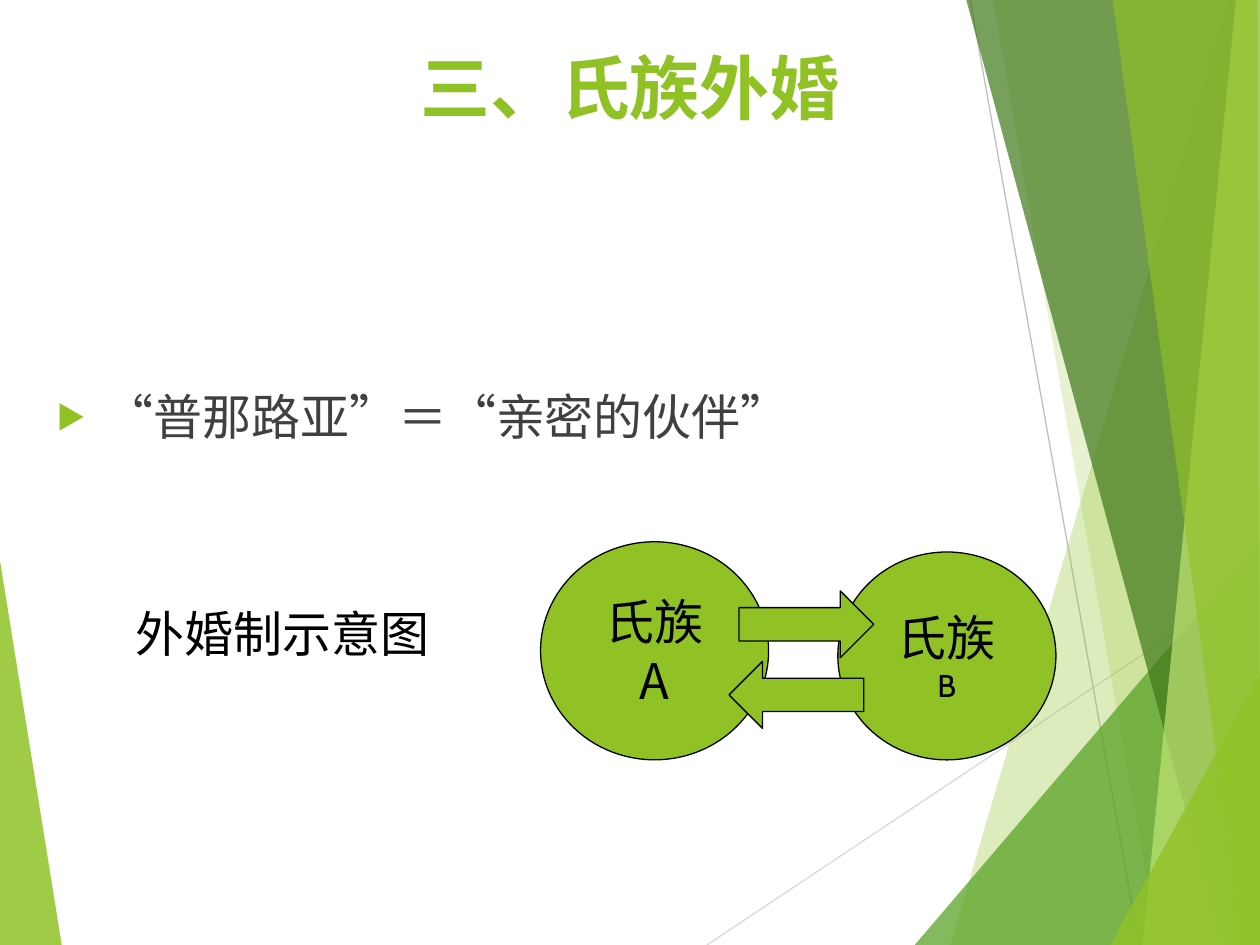
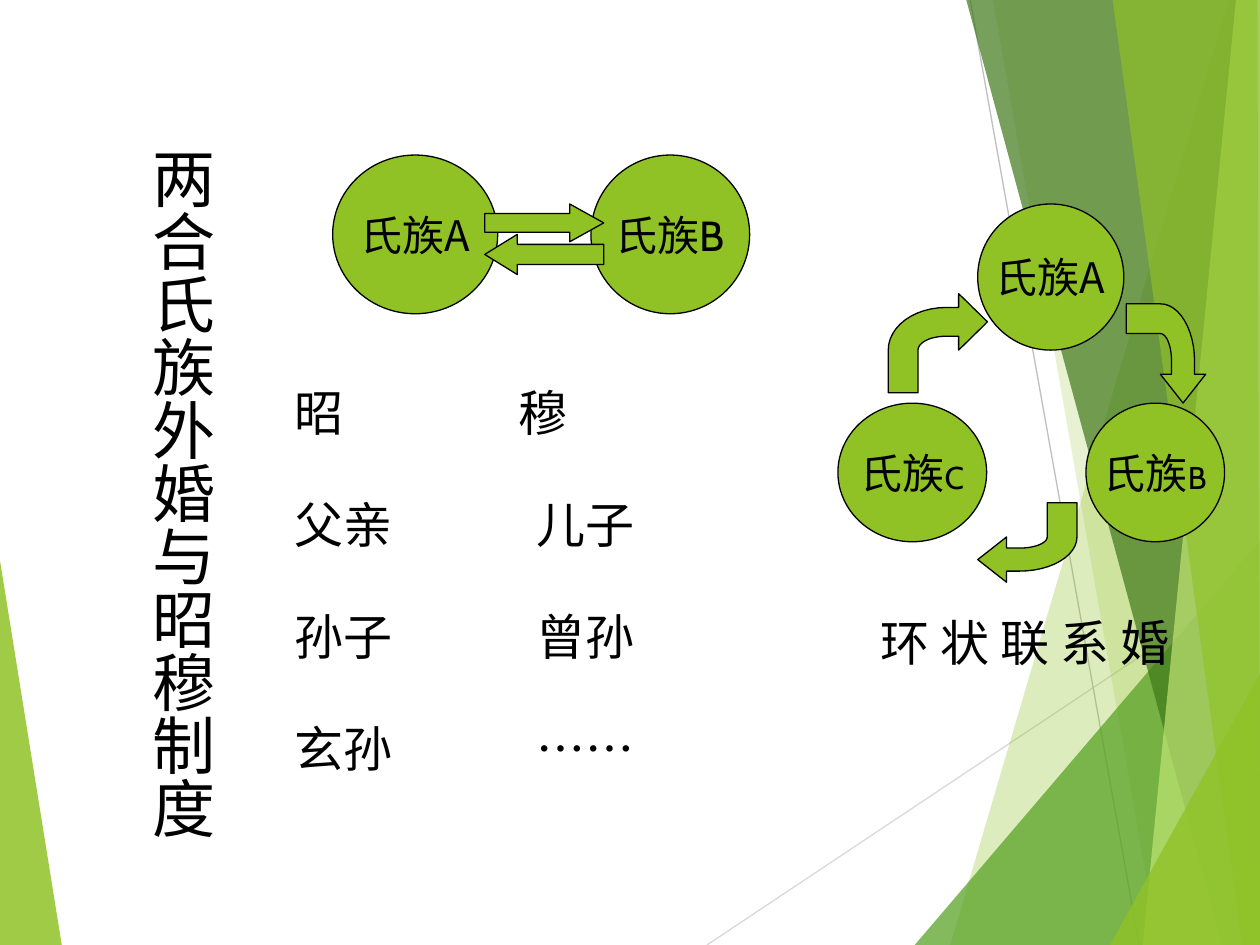
from itertools import cycle
from math import cos, pi, sin

from lxml.etree import SubElement
from pptx import Presentation
from pptx.dml.color import RGBColor
from pptx.enum.shapes import MSO_CONNECTOR as CONNECTOR, MSO_SHAPE as SHAPE
from pptx.enum.text import MSO_ANCHOR as ANCHOR, MSO_AUTO_SIZE as AUTO_SIZE, PP_ALIGN as ALIGN
from pptx.oxml.ns import qn
from pptx.util import Pt

COLORS = {
    "lime": "90C226",
    "green": "54A021",
    "forest": "3F7819",
    "pale": "C0E474",
    "text": "404040",
    "black": "000000",
    "light_line": "D9D9D9",
    "gray_line": "BFBFBF",
}
LATIN = "Cabin"
CJK = "Noto Sans CJK SC"
WIDTH, HEIGHT = 720, 540

RAYS = [((404, 540), (720.7, 329), "light_line"), ((554.4, 0), (651, 540), "gray_line")]
FACETS = [
    ("lime", 85, [(0, 320.4), (35.3, 540), (0, 540)]),
    ("lime", 30, [(702, 0), (543, 540), (720, 540), (720, 0)]),
    ("lime", 20, [(567.4, 0), (661.7, 540), (720, 540), (720, 0)]),
    ("green", 72, [(522.7, 540), (720, 309), (720, 540)]),
    ("forest", 70, [(552.2, 0), (698.4, 540), (720, 540), (720, 0)]),
    ("pale", 70, [(706.3, 0), (653, 540), (720, 540), (720, 0)]),
    ("lime", 65, [(635.8, 0), (709.9, 540), (720, 540), (718.6, 0)]),
    ("lime", 80, [(634.3, 540), (720, 385), (720, 540)]),
]


def color(name):
    return RGBColor.from_string(COLORS[name])


def place(shape, left, top, width, height):
    shape.left, shape.top = Pt(left), Pt(top)
    shape.width, shape.height = Pt(width), Pt(height)


def add_text(para, text, size=28, font=LATIN, ink="black", bold=False):
    span = para.add_run()
    span.text = text
    span.font.size = Pt(size)
    span.font.name = font
    span.font.bold = bold
    span.font.color.rgb = color(ink)
    SubElement(span.font._element, qn("a:ea"), typeface=CJK)


def add_outline(page, points):
    points = [(Pt(x), Pt(y)) for x, y in points]
    builder = page.shapes.build_freeform(*points[0], scale=1.0)
    builder.add_line_segments(points[1:], close=True)
    return builder.convert_to_shape()


def paint(shape, fill, line=None):
    shape.shadow.inherit = False
    shape.fill.solid()
    shape.fill.fore_color.rgb = color(fill)
    if line:
        shape.line.color.rgb = color(line)
        shape.line.width = Pt(0.75)
    else:
        shape.line.fill.background()


def add_facet(page, fill, opacity, points):
    facet = add_outline(page, points)
    paint(facet, fill)
    tone = facet.element.spPr.find(".//" + qn("a:srgbClr"))
    SubElement(tone, qn("a:alpha"), val=str(opacity * 1000))
    return facet


def add_ray(page, start, end, ink):
    ray = page.shapes.add_connector(CONNECTOR.STRAIGHT, *map(Pt, start + end))
    ray.line.color.rgb = color(ink)
    ray.line.width = Pt(0.75)
    SubElement(ray.element.spPr, qn("a:effectLst"))
    return ray


def decorate_master(deck, page):
    first, *others = FACETS
    parts = [add_facet(page, *first)]
    parts += [add_ray(page, *ray) for ray in RAYS]
    parts += [add_facet(page, *facet) for facet in others]
    tree = deck.slide_master.element.cSld.spTree
    for index, part in enumerate(parts):
        part.element.find(".//" + qn("p:cNvPr")).set("id", str(100 + index))
        tree.insert(2 + index, part.element)


def add_title(page, text):
    title = page.shapes.title
    place(title, 36, 21.6, 648, 93.6)
    title.text_frame.vertical_anchor = ANCHOR.TOP
    title.text_frame.auto_size = AUTO_SIZE.NONE
    para = title.text_frame.paragraphs[0]
    para.alignment = ALIGN.CENTER
    add_text(para, text, size=40, ink="lime", bold=True)


def add_bullet_line(page, pieces):
    body = page.placeholders[1]
    place(body, 25.2, 173.5, 674.6, 334.8)
    body.text_frame.vertical_anchor = ANCHOR.TOP
    body.text_frame.auto_size = AUTO_SIZE.NONE
    para = body.text_frame.paragraphs[0]
    para.line_spacing = 2.3
    para.space_before = Pt(10)
    format_element = para._p.get_or_add_pPr()
    format_element.set("marL", str(Pt(27.4)))
    format_element.set("indent", str(Pt(-27.4)))
    tone = SubElement(format_element, qn("a:buClr"))
    SubElement(tone, qn("a:srgbClr"), val=COLORS["lime"])
    SubElement(format_element, qn("a:buSzPct"), val="60000")
    SubElement(format_element, qn("a:buFont"), typeface=CJK)
    SubElement(format_element, qn("a:buChar"), char="▶")
    for piece, font in zip(pieces, cycle([CJK, LATIN])):
        add_text(para, piece, font=font, ink="text")


def add_clan(page, left, top, width, height, lines, font=LATIN):
    clan = page.shapes.add_shape(SHAPE.OVAL, *map(Pt, (left, top, width, height)))
    paint(clan, "lime", "black")
    frame = clan.text_frame
    frame.word_wrap = False
    frame.vertical_anchor = ANCHOR.MIDDLE
    for index, line in enumerate(lines):
        para = frame.add_paragraph() if index else frame.paragraphs[0]
        para.alignment = ALIGN.CENTER
        for text, size in line:
            add_text(para, text, size=size, font=font)


def add_arrow(page, kind, left, top, width, height, head):
    arrow = page.shapes.add_shape(kind, *map(Pt, (left, top, width, height)))
    paint(arrow, "lime", "black")
    arrow.adjustments[0] = 0.5
    arrow.adjustments[1] = head


def quarter_arc(center, radius_x, radius_y, start, end, steps=12):
    angles = [start + (end - start) * step / steps for step in range(steps + 1)]
    return [(center[0] + radius_x * cos(a), center[1] - radius_y * sin(a)) for a in angles]


def add_bent_arrow(page, left, top, width, height, rotation):
    bend = (0.58, 0.57)
    outline = [(1, 0.285), (0.71, 0), (0.71, 0.14)]
    outline += quarter_arc(bend, 0.58, 0.43, pi / 2, pi)
    outline += [(0, 1), (0.3, 1)]
    outline += quarter_arc(bend, 0.28, 0.14, pi, pi / 2)
    outline += [(0.71, 0.43), (0.71, 0.57)]
    arrow = add_outline(page, [(left + x * width, top + y * height) for x, y in outline])
    paint(arrow, "lime", "black")
    arrow.rotation = rotation


def add_label(page, left, top, width, height, text, spacing=1.0, vertical=False, **style):
    box = page.shapes.add_textbox(*map(Pt, (left, top, width, height)))
    frame = box.text_frame
    frame.word_wrap = False
    frame.auto_size = AUTO_SIZE.SHAPE_TO_FIT_TEXT
    if vertical:
        frame._txBody.bodyPr.set("vert", "eaVert")
    para = frame.paragraphs[0]
    para.line_spacing = spacing
    add_text(para, text, **style)


def add_generations(page, left, top, width, height, rows):
    frame = page.shapes.add_textbox(*map(Pt, (left, top, width, height))).text_frame
    frame.word_wrap = True
    for index, (first, second, stop) in enumerate(rows):
        para = frame.add_paragraph() if index else frame.paragraphs[0]
        para.line_spacing = 1.9
        tabs = SubElement(para._p.get_or_add_pPr(), qn("a:tabLst"))
        SubElement(tabs, qn("a:tab"), pos=str(Pt(stop)), algn="l")
        add_text(para, f"{first}\t{second}", font=CJK)


def build_exogamy(page):
    add_title(page, "三、氏族外婚")
    add_bullet_line(page, ["“", "普那路亚", "”", "＝", "“", "亲密的伙伴", "”"])
    add_clan(page, 308.9, 309.6, 130.3, 124.6, [[("氏族", 28)], [("A", 28)]], font=CJK)
    add_clan(page, 478.8, 315.4, 124.6, 118.8, [[("氏族", 28)], [("B", 18)]])
    add_arrow(page, SHAPE.RIGHT_ARROW, 422.3, 337.7, 77, 38.2, 0.5)
    add_arrow(page, SHAPE.LEFT_ARROW, 416.6, 378, 77, 38.2, 0.5)
    add_label(page, 70.6, 341.3, 182.2, 41, "外婚制示意图")


def build_zhaomu(page):
    add_clan(page, 190.1, 88.6, 94.3, 90.7, [[("氏族A", 24)]], font=CJK)
    add_clan(page, 337.7, 88.6, 90.7, 90.7, [[("氏族B", 24)]])
    rows = [("昭", "穆", 128), ("父亲", "儿子", 138), ("孙子", "曾孙", 138), ("玄孙", "……", 138)]
    add_generations(page, 161.3, 185, 308, 262.8, rows)
    add_arrow(page, SHAPE.RIGHT_ARROW, 277, 116.6, 68, 21.6, 0.9)
    add_arrow(page, SHAPE.LEFT_ARROW, 277, 133.9, 68, 23, 0.81)
    add_label(page, 70.6, 77, 53.3, 403.2, "两合氏族外婚与昭穆制度", spacing=0.9, vertical=True, size=36)
    add_clan(page, 558.7, 116.6, 83.5, 83.5, [[("氏族A", 24)]], font=CJK)
    for left, width, letter in [(478.8, 85, "C"), (620.6, 79.2, "B")]:
        add_clan(page, left, 230.4, width, 79.2, [[("氏族", 24), (letter, 18)]])
    add_label(page, 496.1, 343.4, 210.2, 43.9, "环 状 联 系 婚", spacing=1.1, font=CJK)
    add_bent_arrow(page, 507.6, 167.8, 56.7, 56.7, 0)
    add_bent_arrow(page, 637.9, 179.3, 56.7, 45.4, 90)
    add_bent_arrow(page, 558.7, 287.3, 56.7, 45.4, 180)


def main():
    deck = Presentation()
    deck.slide_width, deck.slide_height = Pt(WIDTH), Pt(HEIGHT)
    exogamy = deck.slides.add_slide(deck.slide_layouts[1])
    decorate_master(deck, exogamy)
    build_exogamy(exogamy)
    build_zhaomu(deck.slides.add_slide(deck.slide_layouts[6]))
    deck.save("out.pptx")


if __name__ == "__main__":
    main()
